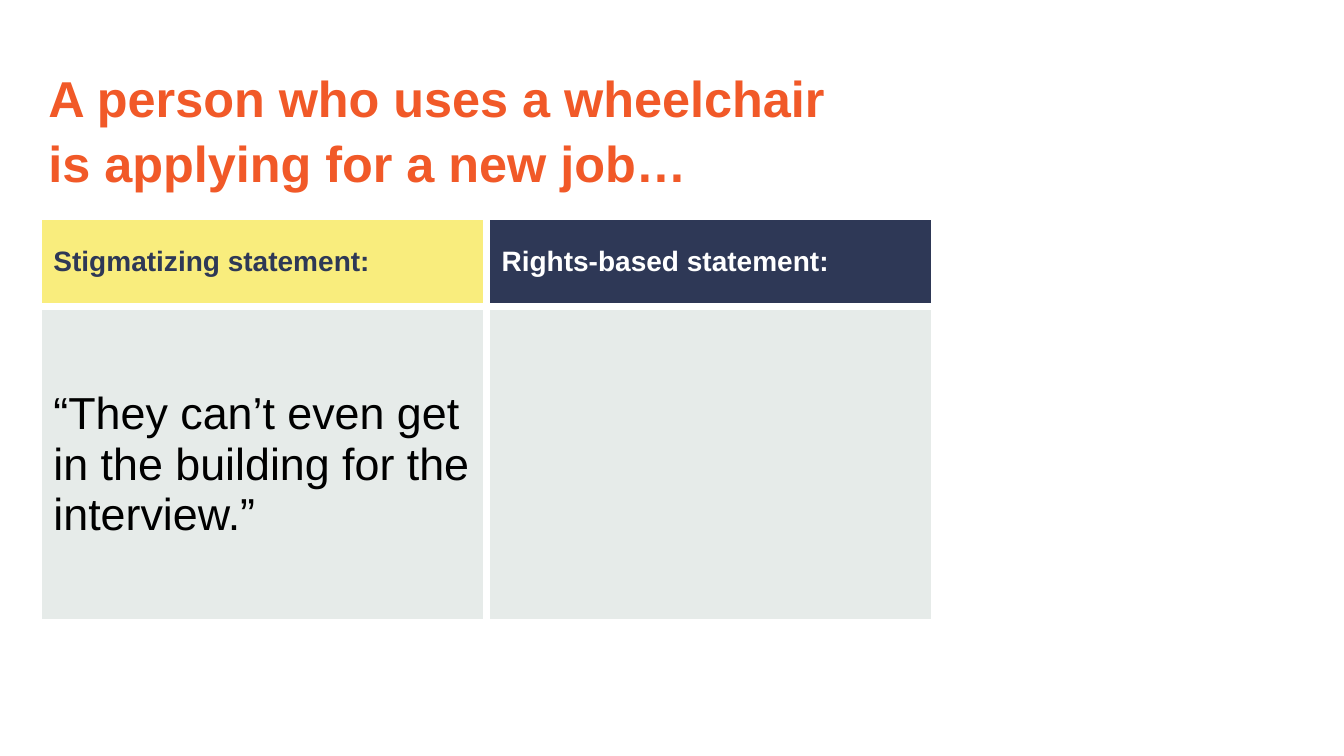
from lxml import etree
from pptx import Presentation
from pptx.dml.color import RGBColor
from pptx.enum.text import MSO_ANCHOR, PP_ALIGN
from pptx.oxml.ns import qn
from pptx.util import Pt

PX = 9144  # 100 px to the inch
MIDDLE = MSO_ANCHOR.MIDDLE
LEFT = PP_ALIGN.LEFT
FONT = "Arial"
TITLE_ONLY = 5
COLORS = {
    "orange": "F15928",
    "yellow": "F9ED7D",
    "navy": "2E3856",
    "mist": "E6EBE9",
    "black": "000000",
    "white": "FFFFFF",
}
# Each cell: text, size, bold, text colour, fill colour
STATEMENTS = [
    [("Stigmatizing statement:", 20, True, "navy", "yellow"),
     ("Rights-based statement:", 20, True, "white", "navy")],
    [("“They can’t even get in the building for the interview.”",
      32, False, "black", "mist"),
     ("", 32, False, "black", "mist")],
]


def rgb(name):
    return RGBColor.from_string(COLORS[name])


def style_paragraph(paragraph, size, bold, color):
    paragraph.alignment = LEFT
    font = paragraph.font
    font.name, font.size, font.bold = FONT, Pt(size), bold
    font.color.rgb = rgb(color)


def set_margins(target, margin):
    target.margin_left = target.margin_right = margin * PX
    target.margin_top = target.margin_bottom = margin * PX


def add_borders(cell, color, width):
    properties = cell._tc.get_or_add_tcPr()
    for index, side in enumerate(("a:lnL", "a:lnR", "a:lnT", "a:lnB")):
        line = etree.Element(qn(side), w=str(Pt(width)))
        fill = etree.SubElement(line, qn("a:solidFill"))
        etree.SubElement(fill, qn("a:srgbClr"), val=COLORS[color])
        properties.insert(index, line)


def place_title(slide, left, top, width, height):
    title = slide.shapes.title
    title.left, title.top = left * PX, top * PX
    title.width, title.height = width * PX, height * PX
    frame = title.text_frame
    frame.text = "A person who uses a wheelchair is applying for a new job…"
    frame.word_wrap = True
    frame.vertical_anchor = MIDDLE
    set_margins(frame, 10)
    heading = frame.paragraphs[0]
    heading.line_spacing = 1.07
    style_paragraph(heading, 36, True, "orange")


def fill_cell(cell, text, size, bold, color, fill):
    cell.text = text
    cell.vertical_anchor = MIDDLE
    set_margins(cell, 15)
    cell.fill.solid()
    cell.fill.fore_color.rgb = rgb(fill)
    style_paragraph(cell.text_frame.paragraphs[0], size, bold, color)
    add_borders(cell, "white", 6)


def add_statements(slide, left, top, width, height, header_height):
    table = slide.shapes.add_table(
        len(STATEMENTS), len(STATEMENTS[0]),
        left * PX, top * PX, width * PX, height * PX).table
    table.rows[0].height = header_height * PX
    table.rows[1].height = (height - header_height) * PX
    for r, row in enumerate(STATEMENTS):
        for c, content in enumerate(row):
            fill_cell(table.cell(r, c), *content)


def main():
    deck = Presentation()
    deck.slide_width, deck.slide_height = 1333 * PX, 750 * PX
    slide = deck.slides.add_slide(deck.slide_layouts[TITLE_ONLY])
    place_title(slide, 38, 54, 820, 145)
    add_statements(slide, 38, 215, 889, 403, header_height=89)
    deck.save("out.pptx")


if __name__ == "__main__":
    main()
